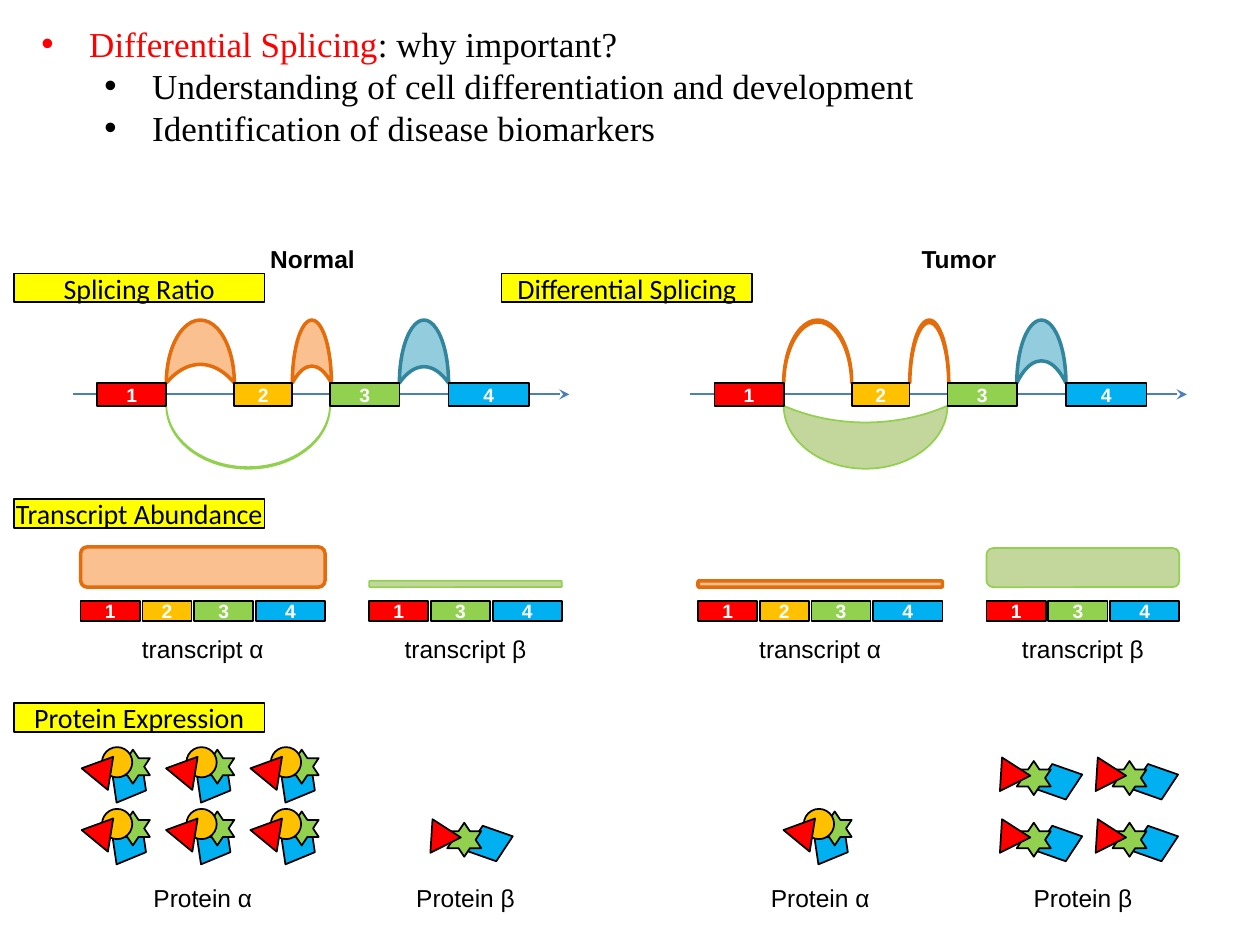
from lxml import etree
from pptx import Presentation
from pptx.dml.color import RGBColor
from pptx.enum.shapes import MSO_CONNECTOR, MSO_SHAPE
from pptx.enum.text import MSO_ANCHOR, PP_ALIGN
from pptx.oxml.ns import qn
from pptx.util import Inches, Pt

RECT, ROUND, MOON = MSO_SHAPE.RECTANGLE, MSO_SHAPE.ROUNDED_RECTANGLE, MSO_SHAPE.MOON
STAR, OVAL = MSO_SHAPE.STAR_6_POINT, MSO_SHAPE.OVAL
TRIANGLE, PARALLELOGRAM = MSO_SHAPE.ISOSCELES_TRIANGLE, MSO_SHAPE.PARALLELOGRAM
STRAIGHT = MSO_CONNECTOR.STRAIGHT
CENTER, MIDDLE = PP_ALIGN.CENTER, MSO_ANCHOR.MIDDLE

BLACK, WHITE, RED, YELLOW = "000000", "FFFFFF", "FF0000", "FFFF00"
GREEN, BLUE, GOLD = "92D050", "00B0F0", "FFC000"
ORANGE_STYLE = ("FAC090", "E46C0A", 2)
TEAL_STYLE = ("93CDDD", "31859C", 2)
GREEN_STYLE = ("C3D69B", GREEN, 1)
EXON_COLORS = {"1": RED, "2": GOLD, "3": GREEN, "4": BLUE}
EXON_WIDTHS = {"1": 0.47, "2": 0.39, "3": 0.47, "4": 0.55}

EXON_FONT = dict(name="Arial", size=Pt(11), bold=True, color=WHITE)
LABEL_FONT = dict(name="Arial", size=Pt(14), color=BLACK)
HEAD_FONT = dict(LABEL_FONT, bold=True)
TAG_FONT = dict(name="Calibri", size=Pt(16), color=BLACK)
BULLET_FONT = dict(name="Times New Roman", size=Pt(20), color=BLACK)


def rgb(value):
    return RGBColor.from_string(value)


def add_run(p, text, font):
    r = p.add_run()
    r.text = text
    for key, value in font.items():
        if key == "color":
            r.font.color.rgb = rgb(value)
        else:
            setattr(r.font, key, value)


def set_text(sp, text, font):
    tf = sp.text_frame
    margins = dict.fromkeys(("margin_left", "margin_top", "margin_right", "margin_bottom"), 0)
    for key, value in dict(margins, word_wrap=True, vertical_anchor=MIDDLE).items():
        setattr(tf, key, value)
    p = tf.paragraphs[0]
    p.alignment = CENTER
    add_run(p, text, font)


def add_part(shapes, kind, box, fill, line=BLACK, width=1, rotation=0, adj=None):
    sp = shapes.add_shape(kind, *map(Inches, box))
    sp.shadow.inherit = False
    sp.fill.solid()
    sp.fill.fore_color.rgb = rgb(fill)
    sp.line.color.rgb = rgb(line)
    sp.line.width = Pt(width)
    sp.rotation = rotation
    if adj is not None:
        sp.adjustments[0] = adj
    return sp


def add_label(shapes, center, top, text, font, width=1.28):
    sp = shapes.add_textbox(*map(Inches, (center - width / 2, top, width, 0.33)))
    set_text(sp, text, font)


def add_exon(shapes, number, box):
    set_text(add_part(shapes, RECT, box, EXON_COLORS[number]), number, EXON_FONT)


def add_tag(shapes, left, top, text):
    set_text(add_part(shapes, RECT, (left, top, 1.99, 0.23), YELLOW), text, TAG_FONT)


def add_bullets(shapes, left, top, width, height):
    tf = shapes.add_textbox(*map(Inches, (left, top, width, height))).text_frame
    tf.word_wrap = True
    lines = [
        (0, [("Differential Splicing", RED), (": why important?", BLACK)]),
        (1, [("Understanding of cell differentiation and development", BLACK)]),
        (1, [("Identification of disease biomarkers", BLACK)]),
    ]
    for i, (level, runs) in enumerate(lines):
        p = tf.add_paragraph() if i else tf.paragraphs[0]
        p.level = level
        for text, color in runs:
            add_run(p, text, dict(BULLET_FONT, color=color))
        ppr = p._p.get_or_add_pPr()
        ppr.set("marL", str(Inches(0.38 + 0.5 * level)))
        ppr.set("indent", str(Inches(-0.38)))
        etree.SubElement(ppr, qn("a:buFont")).set("typeface", "Arial")
        etree.SubElement(ppr, qn("a:buChar")).set("char", "•")


def add_gene(slide, left, top, thickness):
    """Gene axis with exons; thickness gives the moon adjustment of each junction."""
    shapes = slide.shapes.add_group_shape().shapes

    # Splice junctions: start, span, turn, drop from top, style
    junctions = [
        (0.74, 0.54, 90, 0, ORANGE_STYLE),
        (1.74, 0.31, 90, 0, ORANGE_STYLE),
        (2.59, 0.39, 90, 0, TEAL_STYLE),
        (0.74, 1.3, 270, 0.68, GREEN_STYLE),
    ]
    for (start, span, turn, drop, style), adj in zip(junctions, thickness):
        # The moon is turned a quarter, so its height lies along the axis
        box = (left + start + span / 2 - 0.25, top + drop + 0.25 - span / 2, 0.5, span)
        add_part(shapes, MOON, box, *style, rotation=turn, adj=adj)

    # Axis
    y = top + 0.59
    axis = shapes.add_connector(STRAIGHT, *map(Inches, (left, y, left + 3.94, y)))
    axis.line.color.rgb = rgb("4B7EBC")
    axis.line.width = Pt(1.25)
    etree.SubElement(axis.line._get_or_add_ln(), qn("a:tailEnd")).set("type", "stealth")
    etree.SubElement(axis._element.spPr, qn("a:effectLst"))

    # Exons
    for number, start, width in (("1", 0.19, 0.55), ("2", 1.28, 0.46),
                                 ("3", 2.04, 0.55), ("4", 2.98, 0.64)):
        add_exon(shapes, number, (left + start, top + 0.5, width, 0.18))


def add_protein_alpha(shapes, x, y):
    add_part(shapes, PARALLELOGRAM, (x + 0.18, y + 0.16, 0.31, 0.23), BLUE, rotation=337.6)
    add_part(shapes, STAR, (x + 0.23, y + 0.02, 0.27, 0.27), GREEN)
    add_part(shapes, OVAL, (x + 0.12, y, 0.24, 0.24), GOLD)
    add_part(shapes, TRIANGLE, (x, y + 0.05, 0.27, 0.23), RED, rotation=39.5)


def add_protein_beta(shapes, x, y):
    add_part(shapes, PARALLELOGRAM, (x + 0.38, y + 0.09, 0.31, 0.23), BLUE, rotation=19.4)
    add_part(shapes, STAR, (x + 0.2, y + 0.04, 0.27, 0.27), GREEN)
    add_part(shapes, TRIANGLE, (x, y, 0.27, 0.23), RED, rotation=333.2)


ISOFORMS = {
    "α": dict(exons="1234", style=ORANGE_STYLE, protein=add_protein_alpha, step=0.67, top=6.42),
    "β": dict(exons="134", style=GREEN_STYLE, protein=add_protein_beta, step=0.76, top=6.49),
}


def add_isoform(slide, left, name, bar_height, protein_left, columns, rows):
    """Abundance bar, transcript and protein molecules of one isoform."""
    shapes = slide.shapes.add_group_shape().shapes
    form = ISOFORMS[name]
    gap = 0.02
    width = sum(EXON_WIDTHS[n] + gap for n in form["exons"]) - gap
    center = left + width / 2

    # Abundance bar and transcript
    add_part(shapes, ROUND, (left, 4.66 - bar_height, width, bar_height), *form["style"])
    x = left
    for number in form["exons"]:
        add_exon(shapes, number, (x, 4.77, EXON_WIDTHS[number], 0.16))
        x += EXON_WIDTHS[number] + gap
    add_label(shapes, center, 4.98, f"transcript {name}", LABEL_FONT)

    # Protein molecules, stacked upwards from the bottom row
    for row in range(rows):
        for col in range(columns):
            form["protein"](shapes, protein_left + col * form["step"], form["top"] - row * 0.49)
    add_label(shapes, center, 6.96, f"Protein {name}", LABEL_FONT, 1.08)


def main():
    prs = Presentation()
    prs.slide_width, prs.slide_height = Inches(10), Inches(7.5)
    slide = prs.slides.add_slide(prs.slide_layouts[6])

    add_bullets(slide.shapes, 0.23, 0.13, 9.61, 1.11)

    # Normal and tumor genes
    add_gene(slide, 0.58, 2.54, (0.704, 0.731, 0.741, 0.025))
    add_gene(slide, 5.48, 2.54, (0.031, 0.04, 0.647, 0.735))

    # Isoforms: left, name, bar height, protein left, columns, rows
    for isoform in ((0.64, "α", 0.32, 0.69, 3, 2), (2.93, "β", 0.05, 3.35, 1, 1),
                    (5.54, "α", 0.05, 6.26, 1, 1), (7.83, "β", 0.31, 7.87, 2, 2)):
        add_isoform(slide, *isoform)

    # Headings and section tags
    add_label(slide.shapes, 2.48, 1.89, "Normal", HEAD_FONT)
    add_label(slide.shapes, 7.61, 1.89, "Tumor", HEAD_FONT)
    for tag in ((0.11, 2.17, "Splicing Ratio"), (3.98, 2.17, "Differential Splicing"),
                (0.11, 3.96, "Transcript Abundance"), (0.11, 5.58, "Protein Expression")):
        add_tag(slide.shapes, *tag)

    prs.save("out.pptx")


if __name__ == "__main__":
    main()
